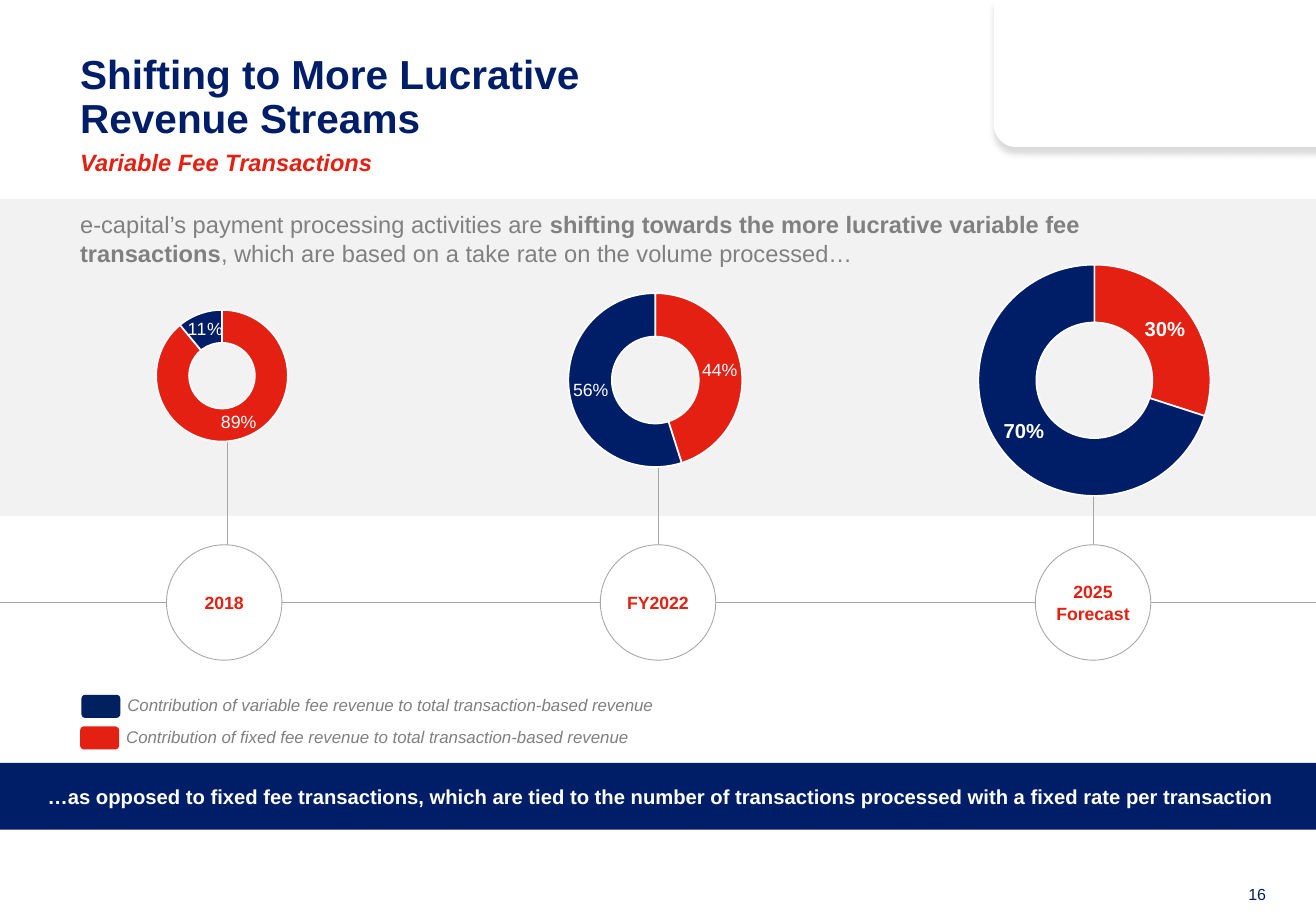
from dataclasses import dataclass

from lxml import etree
from pptx import Presentation
from pptx.chart.data import CategoryChartData
from pptx.dml.color import RGBColor
from pptx.enum.chart import XL_CHART_TYPE
from pptx.enum.shapes import MSO_CONNECTOR, MSO_SHAPE
from pptx.enum.text import MSO_ANCHOR, PP_ALIGN
from pptx.oxml.ns import qn
from pptx.util import Inches, Pt

DOUGHNUT = XL_CHART_TYPE.DOUGHNUT
STRAIGHT = MSO_CONNECTOR.STRAIGHT
RECTANGLE, ROUNDED = MSO_SHAPE.RECTANGLE, MSO_SHAPE.ROUNDED_RECTANGLE
OVAL, DIAGONAL_ROUNDED = MSO_SHAPE.OVAL, MSO_SHAPE.ROUND_2_DIAG_RECTANGLE
TOP, MIDDLE = MSO_ANCHOR.TOP, MSO_ANCHOR.MIDDLE
LEFT, CENTER, RIGHT = PP_ALIGN.LEFT, PP_ALIGN.CENTER, PP_ALIGN.RIGHT

FONT = "Arial"
COLORS = {
    "navy": "001E68", "swatch": "002060", "red": "E32012", "text": "808080",
    "line": "A6A6A6", "band": "F2F2F2", "white": "FFFFFF", "black": "000000",
}
SLIDE_WIDTH = 10.83
AXIS_Y = 4.96
CIRCLE_SIZE = 0.95
STEM_BOTTOM = 4.52


@dataclass
class Milestone:
    label: str
    circle_left: float
    stem_x: float
    stem_top: float
    chart_box: tuple[float, float, float, float]
    plot_box: tuple[float, float, float, float]
    shares: tuple[float, float]
    label_size: float = 10.5
    label_bold: bool = False
    fixed_label: str = ""


@dataclass
class LegendEntry:
    left: float
    top: float
    color: str
    text: str


MILESTONES = [
    Milestone("2018", 1.37, 1.87, 3.64, (0.93, 2.47, 1.87, 1.3),
              (0.19, 0.06, 0.58, 0.84), (0.89, 0.11)),
    Milestone("FY2022", 4.94, 5.42, 3.75, (4.33, 2.33, 2.17, 1.6),
              (0.16, 0.05, 0.66, 0.9), (0.46, 0.56), fixed_label="44%"),
    Milestone("2025 Forecast", 8.52, 9, 3.89, (7.71, 2.16, 2.62, 1.93),
              (0.13, 0.01, 0.73, 0.99), (0.3, 0.7), 12, True),
]
LEGEND = [
    LegendEntry(0.67, 5.72, "swatch",
                "Contribution of variable fee revenue to total transaction-based revenue"),
    LegendEntry(0.66, 5.98, "red",
                "Contribution of fixed fee revenue to total transaction-based revenue"),
]


def rgb(name: str) -> RGBColor:
    return RGBColor.from_string(COLORS[name])


def set_font(font, size: float, color: str, bold: bool = False, italic: bool = False) -> None:
    font.name, font.size, font.bold, font.italic = FONT, Pt(size), bold, italic
    font.color.rgb = rgb(color)


def write_text(shape, text, *, size: float, color: str, bold: bool = False,
               italic: bool = False, align=LEFT, anchor=TOP,
               insets=(0, 0.05, 0, 0.05), spacing: float | None = None) -> None:
    """Text is a string, or a list of (string, bold) runs."""
    frame = shape.text_frame
    frame.word_wrap = True
    frame.vertical_anchor = anchor
    (frame.margin_left, frame.margin_top,
     frame.margin_right, frame.margin_bottom) = map(Inches, insets)
    paragraph = frame.paragraphs[0]
    paragraph.alignment = align
    if spacing:
        paragraph.line_spacing = spacing
    for part, part_bold in [(text, bold)] if isinstance(text, str) else text:
        run = paragraph.add_run()
        run.text = part
        set_font(run.font, size, color, part_bold, italic)


def add_text(slide, box, text, **text_format):
    shape = slide.shapes.add_textbox(*map(Inches, box))
    write_text(shape, text, **text_format)
    return shape


def add_shape(slide, kind, box, fill: str, line: str | None = None):
    shape = slide.shapes.add_shape(kind, *map(Inches, box))
    shape.shadow.inherit = False
    shape.fill.solid()
    shape.fill.fore_color.rgb = rgb(fill)
    if line:
        shape.line.color.rgb = rgb(line)
        shape.line.width = Pt(0.5)
    else:
        shape.line.fill.background()
    return shape


def add_line(slide, start, end) -> None:
    connector = slide.shapes.add_connector(STRAIGHT, *map(Inches, (*start, *end)))
    connector.line.color.rgb = rgb("line")
    connector.line.width = Pt(0.5)
    etree.SubElement(connector._element.spPr, qn("a:effectLst"))


def add_corner_panel(slide) -> None:
    panel = add_shape(slide, DIAGONAL_ROUNDED, (8.18, 0, 2.9, 1.21), "white")
    panel.adjustments[0], panel.adjustments[1] = 0.15, 0
    properties = panel._element.spPr
    properties.find(qn("a:xfrm")).set("flipV", "1")
    effects = properties.find(qn("a:effectLst"))
    shadow = etree.SubElement(effects, qn("a:outerShdw"), blurRad=str(Pt(4)),
                              dist=str(Pt(4)), dir="5400000", rotWithShape="0")
    color = etree.SubElement(shadow, qn("a:srgbClr"), val=COLORS["black"])
    etree.SubElement(color, qn("a:alpha"), val="14000")


def set_plot_layout(chart, plot_box) -> None:
    plot_area = chart._chartSpace.chart.plotArea
    for old_layout in plot_area.findall(qn("c:layout")):
        plot_area.remove(old_layout)
    layout = etree.Element(qn("c:layout"))
    plot_area.insert(0, layout)
    manual = etree.SubElement(layout, qn("c:manualLayout"))
    settings = [("layoutTarget", "inner"), ("xMode", "edge"), ("yMode", "edge"),
                *zip("xywh", plot_box)]
    for tag, value in settings:
        etree.SubElement(manual, qn(f"c:{tag}"), val=str(value))


def add_doughnut(slide, milestone: Milestone) -> None:
    data = CategoryChartData(number_format="0%")
    data.categories = ["1", "2"]
    data.add_series("Series 1", milestone.shares)
    chart = slide.shapes.add_chart(DOUGHNUT, *map(Inches, milestone.chart_box), data).chart
    chart.has_legend = chart.has_title = False
    set_font(chart.font, 10, "black")
    set_plot_layout(chart, milestone.plot_box)

    chart.plots[0].vary_by_categories = True
    series = chart.plots[0].series[0]
    for index, color in enumerate(("red", "navy")):
        point_format = series.points[index].format
        point_format.fill.solid()
        point_format.fill.fore_color.rgb = rgb(color)
        point_format.line.color.rgb = rgb("white")
        point_format.line.width = Pt(1)

    labels = series.data_labels
    labels.show_value = True
    labels.number_format, labels.number_format_is_linked = "0%", False
    set_font(labels.font, milestone.label_size, "white", milestone.label_bold)
    if milestone.fixed_label:
        frame = series.points[0].data_label.text_frame
        frame.text = milestone.fixed_label
        set_font(frame.paragraphs[0].runs[0].font, milestone.label_size, "white")


def main() -> None:
    presentation = Presentation()
    presentation.slide_width, presentation.slide_height = Inches(SLIDE_WIDTH), Inches(7.5)
    slide = presentation.slides.add_slide(presentation.slide_layouts[6])

    # Corner panel, page number and grey band
    add_corner_panel(slide)
    add_text(slide, (7.52, 7.23, 2.9, 0.26), "16", size=9.5, color="navy",
             align=RIGHT, insets=(0.1, 0.05, 0, 0.05))
    add_shape(slide, RECTANGLE, (0, 1.64, SLIDE_WIDTH, 2.61), "band")

    # Headings and introduction
    add_text(slide, (0.66, 0.45, 4.62, 0.76), "Shifting to More Lucrative Revenue Streams",
             size=24, color="navy", bold=True, spacing=0.9, insets=(0, 0, 0.1, 0.05))
    add_text(slide, (0.66, 1.22, 4.62, 0.42), "Variable Fee Transactions",
             size=14, color="red", bold=True, italic=True, insets=(0, 0, 0, 0))
    introduction = [
        ("e-capital’s payment processing activities are ", False),
        ("shifting towards the more lucrative variable fee transactions", True),
        (", which are based on a take rate on the volume processed…", False),
    ]
    add_text(slide, (0.66, 1.63, 9.5, 0.65), introduction, size=14, color="text",
             insets=(0, 0.1, 0, 0.05))

    # Timeline with a doughnut above each milestone
    add_line(slide, (0, AXIS_Y), (SLIDE_WIDTH, AXIS_Y))
    for milestone in MILESTONES:
        add_line(slide, (milestone.stem_x, STEM_BOTTOM), (milestone.stem_x, milestone.stem_top))
        add_doughnut(slide, milestone)
        circle_box = (milestone.circle_left, AXIS_Y - CIRCLE_SIZE / 2, CIRCLE_SIZE, CIRCLE_SIZE)
        circle = add_shape(slide, OVAL, circle_box, "white", "line")
        write_text(circle, milestone.label, size=10.5, color="red", bold=True,
                   align=CENTER, anchor=MIDDLE)

    # Legend
    for entry in LEGEND:
        add_shape(slide, ROUNDED, (entry.left, entry.top, 0.32, 0.19), entry.color)
        add_text(slide, (entry.left + 0.28, entry.top - 0.04, 4.6, 0.25), entry.text, size=10,
                 color="text", italic=True, anchor=MIDDLE, insets=(0.1, 0.05, 0.1, 0.05))

    # Closing banner
    banner = add_shape(slide, RECTANGLE, (0, 6.28, 10.88, 0.55), "navy")
    write_text(banner, "…as opposed to fixed fee transactions, which are tied to the number of "
               "transactions processed with a fixed rate per transaction",
               size=12, color="white", bold=True, align=CENTER, anchor=MIDDLE)

    presentation.save("out.pptx")


if __name__ == "__main__":
    main()
